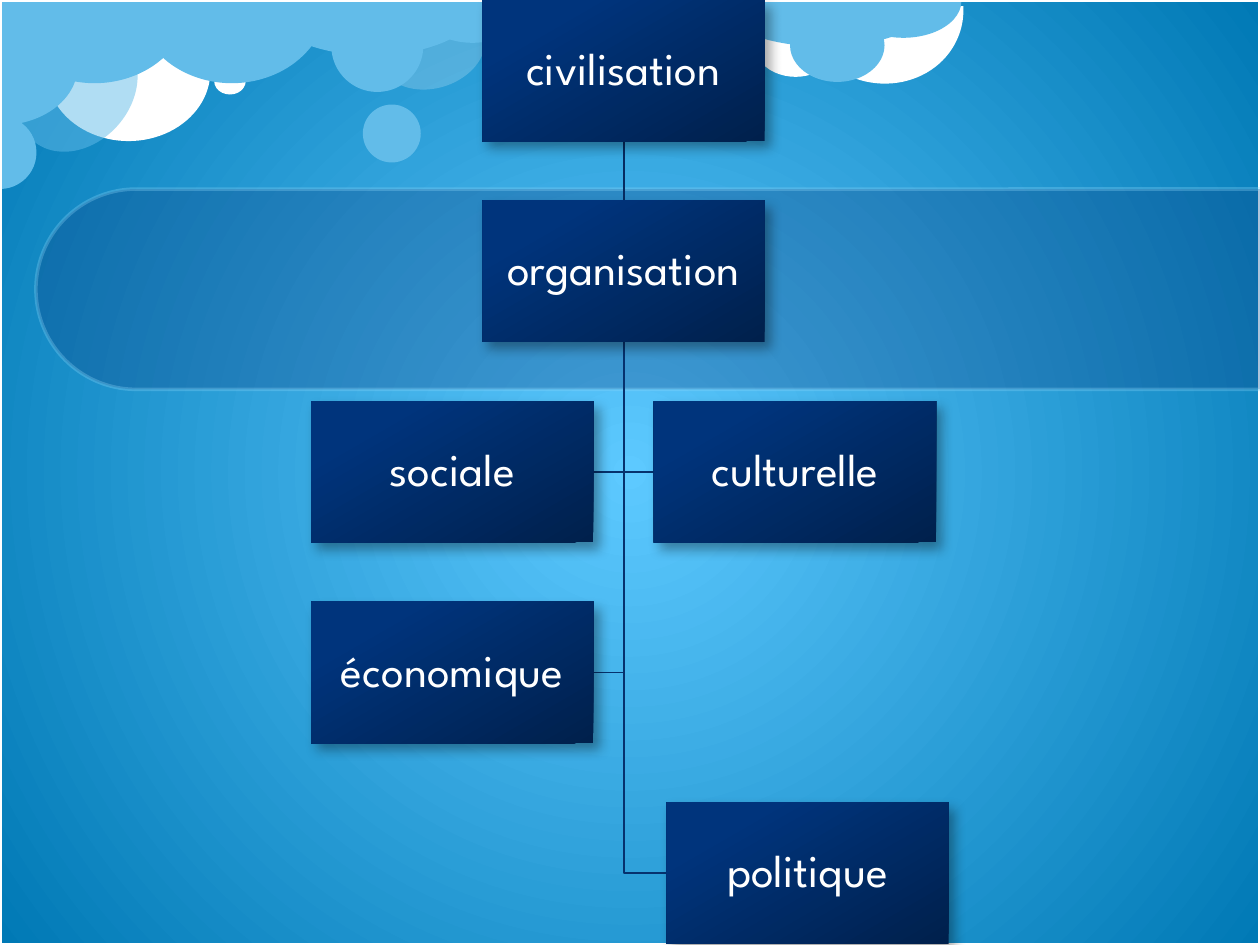
from collections import namedtuple
from dataclasses import dataclass

from lxml import etree
from pptx import Presentation
from pptx.dml.color import RGBColor
from pptx.enum.shapes import MSO_CONNECTOR, MSO_SHAPE
from pptx.enum.text import MSO_ANCHOR, PP_ALIGN
from pptx.oxml.ns import qn
from pptx.util import Inches, Pt

ELLIPSE, PIE, ARC = MSO_SHAPE.OVAL, MSO_SHAPE.PIE, MSO_SHAPE.ARC
RECTANGLE, ROUNDED_END = MSO_SHAPE.RECTANGLE, MSO_SHAPE.ROUND_2_SAME_RECTANGLE
STRAIGHT = MSO_CONNECTOR.STRAIGHT
CENTER, MIDDLE = PP_ALIGN.CENTER, MSO_ANCHOR.MIDDLE

COLUMNS, ROWS = 100, 75
CELL = Inches(10) // COLUMNS
HALF_DISC, CRESCENT = (0, 108), (151.8, 44.48)

Box = namedtuple("Box", "left top width height")
Puff = namedtuple("Puff", "kind box fill alpha turn cut", defaults=(100, 0, ()))


@dataclass(frozen=True)
class Theme:
    white: str = "FFFFFF"
    cloud: str = "62BCE9"
    sky: tuple = ((0, "5DC9FF"), (100, "0079B5"))
    band: str = "073779"
    band_edge: str = "8FD9FB"
    card: tuple = ((0, "00204C"), (80, "00347C"), (100, "00347D"))
    trunk: str = "062C61"
    branch: str = "06326E"
    shadow: str = "000000"
    font: str = "League Spartan"
    label_size: int = 26
    edge: int = 2
    link: int = 1


THEME = Theme()


def grid(*lengths):
    """Turn grid units into slide lengths."""
    return [round(length * CELL) for length in lengths]


def add_color(parent, color, alpha=100):
    """Append an RGB colour with its opacity in percent."""
    rgb = etree.SubElement(parent, qn("a:srgbClr"), val=color)
    if alpha < 100:
        etree.SubElement(rgb, qn("a:alpha"), val=str(alpha * 1000))


def paint(color_format, color, alpha=100):
    """Set a solid fill or line colour with its opacity in percent."""
    holder = color_format._xPr.find(qn("a:solidFill"))
    holder.clear()
    add_color(holder, color, alpha)


def shade(fill, stops, angle=None):
    """Apply a linear gradient, or a circular one when there is no angle."""
    fill.gradient()
    gradient = fill._xPr.find(qn("a:gradFill"))
    for part in list(gradient):
        gradient.remove(part)
    stop_list = etree.SubElement(gradient, qn("a:gsLst"))
    for position, color in stops:
        stop = etree.SubElement(stop_list, qn("a:gs"), pos=str(position * 1000))
        add_color(stop, color)
    if angle is None:
        circle = etree.SubElement(gradient, qn("a:path"), path="circle")
        center = dict.fromkeys("ltrb", "50000")
        etree.SubElement(circle, qn("a:fillToRect"), **center)
    else:
        etree.SubElement(gradient, qn("a:lin"), ang=str(angle * 60000), scaled="0")


def cast_shadow(shape, color, alpha, blur, distance, angle):
    """Give a shape an outer shadow."""
    effects = shape._element.spPr.find(qn("a:effectLst"))
    shadow = etree.SubElement(
        effects, qn("a:outerShdw"), blurRad=str(Pt(blur)), dist=str(Pt(distance)),
        dir=str(angle * 60000), algn="tl", rotWithShape="0")
    add_color(shadow, color, alpha)


def outline(line, color, width, alpha=100):
    """Draw a solid line in the given colour and width."""
    line.width = Pt(width)
    line.fill.solid()
    paint(line.fill, color, alpha)


def add_figure(slide, kind, box, fill=None, alpha=100, turn=0, cut=()):
    """Add a flat preset shape without a line."""
    figure = slide.shapes.add_shape(kind, *grid(*box))
    figure.shadow.inherit = False
    figure.rotation = turn
    for index, value in enumerate(cut):
        figure.adjustments[index] = value
    figure.line.fill.background()
    if fill is None:
        figure.fill.background()
    else:
        figure.fill.solid()
        paint(figure.fill, fill, alpha)
    return figure


def write(shape, text, *, font, size, color, align=CENTER, spacing=0.9, inset=0.02):
    """Write one formatted paragraph into a shape."""
    frame = shape.text_frame
    frame.word_wrap = True
    frame.vertical_anchor = MIDDLE
    frame.margin_left = frame.margin_right = Inches(inset)
    frame.margin_top = frame.margin_bottom = Inches(inset)
    paragraph = frame.paragraphs[0]
    paragraph.alignment = align
    paragraph.line_spacing = spacing
    run = paragraph.add_run()
    run.text = text
    run.font.name, run.font.size = font, Pt(size)
    run.font.color.rgb = RGBColor.from_string(color)


def draw_clouds(slide, area):
    """Draw the clouds along the top of the area."""
    white, blue = THEME.white, THEME.cloud
    puffs = (
        Puff(ELLIPSE, (31.1, -0.5, 6.4, 8.6), white, 20, 72.8),
        Puff(ELLIPSE, (3.7, 0.1, 13, 11.1), white),
        Puff(ARC, (63.9, -6, 12.1, 13.1), white, 100, 106.5, CRESCENT),
        Puff(ELLIPSE, (59.8, 0.7, 6.7, 5.4), white),
        Puff(PIE, (-0.1, -6.6, 15.2, 13.2), blue, cut=HALF_DISC),
        Puff(PIE, (20.8, -4.4, 17.5, 8.8), blue, cut=HALF_DISC),
        Puff(ELLIPSE, (28.8, 8.3, 4.6, 4.6), blue),
        Puff(ELLIPSE, (1.9, 1.8, 8.5, 10.7), blue, 50, 41.8),
        Puff(PIE, (-2.9, 9.2, 5.8, 5.8), blue, 100, 270, HALF_DISC),
        Puff(ELLIPSE, (17, 5.4, 2.5, 2.1), white),
        Puff(PIE, (10.8, -6.6, 15.2, 13.2), blue, cut=HALF_DISC),
        Puff(PIE, (56.7, -3.8, 17.5, 7.5), blue, cut=HALF_DISC),
        Puff(ELLIPSE, (62.7, 0.7, 7.5, 5.8), blue),
        Puff(PIE, (67.1, -2.8, 9.2, 5.8), blue, cut=HALF_DISC),
        Puff(ELLIPSE, (26.3, 0, 7.3, 7.3), blue),
        Puff(PIE, (32.9, -3.3, 9.2, 6.7), blue, cut=HALF_DISC),
        Puff(PIE, (-4.7, -0.9, 9.3, 12.4), blue, 100, 270, HALF_DISC),
    )
    for puff in puffs:
        left, top, width, height = puff.box
        place = Box(area.left + left, area.top + top, width, height)
        add_figure(slide, puff.kind, place, *puff[2:])


def draw_frame(slide, area):
    """Outline the area."""
    frame = add_figure(slide, RECTANGLE, area)
    outline(frame.line, THEME.white, THEME.edge)


def draw_band(slide, area):
    """Fill the area with a translucent band rounded on its left end."""
    upright = Box(area.left + (area.width - area.height) / 2,
                  area.top + (area.height - area.width) / 2,
                  area.height, area.width)
    band = add_figure(slide, ROUNDED_END, upright, THEME.band, 30, 270, (0.5, 0))
    outline(band.line, THEME.band_edge, THEME.edge, 30)


def draw_card(slide, label, box):
    """Draw one labelled card of the chart."""
    card = add_figure(slide, RECTANGLE, box)
    shade(card.fill, THEME.card, 240)
    cast_shadow(card, THEME.shadow, 35, 7, 5, 50)
    write(card, label, font=THEME.font, size=THEME.label_size, color=THEME.white)


def draw_branch(slide, start, end):
    """Draw a link that goes down and then sideways."""
    (x, y), corner, tip = grid(*start), grid(start[0], end[1]), grid(*end)
    builder = slide.shapes.build_freeform(x, y)
    builder.add_line_segments([corner, tip], close=False)
    branch = builder.convert_to_shape()
    branch.shadow.inherit = False
    branch.fill.background()
    outline(branch.line, THEME.branch, THEME.link)


def draw_chart(slide, area):
    """Draw the hierarchy in five rows on both sides of a trunk."""
    width, height, gap = 22.4, 11.2, 2.4
    pitch = (area.height - height) / 4
    trunk = area.left + gap + width
    stem = ("civilisation", "organisation")
    branches = (("économique", 3, -gap), ("culturelle", 2, gap),
                ("sociale", 2, -gap), ("politique", 4, gap + 1))
    fork = (trunk, area.top + pitch + height)
    cards = [(label, Box(trunk - width / 2, area.top + row * pitch, width, height))
             for row, label in enumerate(stem)]
    for label, row, offset in branches:
        top = area.top + row * pitch
        side = trunk + offset
        draw_branch(slide, fork, (side, top + height / 2))
        left = side if offset > 0 else side - width
        cards.append((label, Box(left, top, width, height)))
    link = slide.shapes.add_connector(
        STRAIGHT, *grid(trunk, area.top + height, trunk, area.top + pitch))
    etree.SubElement(link._element.spPr, qn("a:effectLst"))
    outline(link.line, THEME.trunk, THEME.link)
    for label, box in cards:
        draw_card(slide, label, box)


def main():
    """Build and save the slide."""
    deck = Presentation()
    deck.slide_width, deck.slide_height = grid(COLUMNS, ROWS)
    slide = deck.slides.add_slide(deck.slide_layouts[6])
    shade(slide.background.fill, THEME.sky)
    draw_clouds(slide, Box(0, 0, COLUMNS, 15))
    draw_frame(slide, Box(0, 0, COLUMNS, ROWS))
    draw_band(slide, Box(2.85, 15, 97.2, 15.9))
    draw_chart(slide, Box(24.7, 0, 50.6, 74.9))
    deck.save("out.pptx")


if __name__ == "__main__":
    main()
